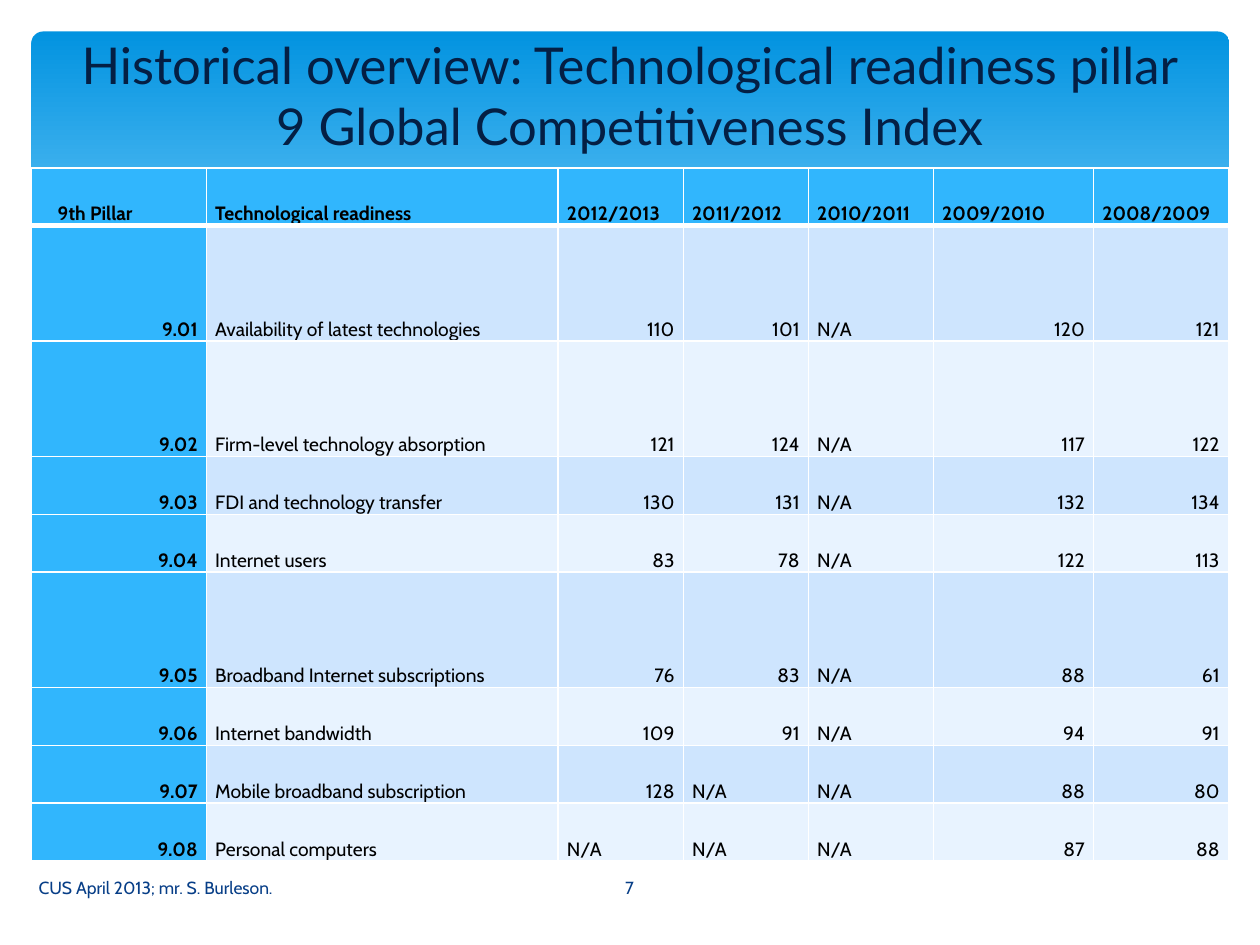
from dataclasses import dataclass

from lxml import etree
from pptx import Presentation
from pptx.dml import color
from pptx.enum import shapes, text
from pptx.oxml import ns
from pptx.slide import Slide
from pptx.util import Pt

YEARS = ["2012/2013", "2011/2012", "2010/2011", "2009/2010", "2008/2009"]
INDICATORS = [
    ("9.01", "Availability of latest technologies", "110", "101", "N/A", "120", "121"),
    ("9.02", "Firm-level technology absorption", "121", "124", "N/A", "117", "122"),
    ("9.03", "FDI and technology transfer", "130", "131", "N/A", "132", "134"),
    ("9.04", "Internet users", "83", "78", "N/A", "122", "113"),
    ("9.05", "Broadband Internet subscriptions", "76", "83", "N/A", "88", "61"),
    ("9.06", "Internet bandwidth", "109", "91", "N/A", "94", "91"),
    ("9.07", "Mobile broadband subscription", "128", "N/A", "N/A", "88", "80"),
    ("9.08", "Personal computers", "N/A", "N/A", "N/A", "87", "88"),
]
COLUMN_WIDTHS = [100, 201, 71.5, 71.5, 71.5, 91.5, 77]
ROW_HEIGHT = 33
TALL_ROWS = {1, 2, 5}
WAVE = [(703, 177), (670, 189), (630, 197), (582, 199), (524, 196), (466, 189),
        (400, 177), (322, 158), (245, 142), (180, 134), (127, 132), (86, 134),
        (55, 140), (33, 148), (17, 153), (17, 237), (703, 237)]


def rgb(value):
    return color.RGBColor.from_string(value)


def apply(target, values):
    for name, value in values.items():
        setattr(target, name, value)


@dataclass
class SlideBuilder:
    slide: Slide
    body_font: str = "Cabin"
    title_font: str = "Lato"
    title_color: str = "041F44"
    footer_color: str = "073E87"
    accent: str = "31B6FD"
    bands: tuple = ("E8F3FF", "CEE5FE")
    border: str = "FFFFFF"

    def add_text(self, paragraph, wording, hex_color, font, layout):
        """Put one run in the paragraph, with font and paragraph formats."""
        run = paragraph.add_run()
        run.text = wording
        apply(run.font, font)
        run.font.color.rgb = rgb(hex_color)
        apply(paragraph, layout)

    def banner(self, left, top, width, height):
        shape = self.slide.shapes.add_shape(
            shapes.MSO_SHAPE.ROUNDED_RECTANGLE, Pt(left), Pt(top), Pt(width), Pt(height))
        shape.adjustments[0] = 0.034
        shape.shadow.inherit = False
        shape.line.fill.background()
        shape.fill.gradient()
        shape.fill.gradient_angle = 270
        stops = [(0, "0293E0"), (0.9, "83D3FE")]
        for stop, (position, value) in zip(shape.fill.gradient_stops, stops):
            stop.position = position
            stop.color.rgb = rgb(value)

    def wave(self, points):
        start, *rest = [(Pt(x), Pt(y)) for x, y in points]
        builder = self.slide.shapes.build_freeform(*start)
        builder.add_line_segments(rest, close=True)
        shape = builder.convert_to_shape()
        shape.shadow.inherit = False
        shape.fill.solid()
        shape.fill.fore_color.rgb = rgb("FFFFFF")
        shape.line.fill.background()

    def label(self, wording, left, top, width, height, hex_color, font, align):
        box = self.slide.shapes.add_textbox(Pt(left), Pt(top), Pt(width), Pt(height))
        frame = box.text_frame
        apply(frame, {"word_wrap": True, "vertical_anchor": text.MSO_ANCHOR.MIDDLE})
        self.add_text(frame.paragraphs[0], wording, hex_color, font, {"alignment": align})

    def title(self, wording):
        self.label(wording, 36, 0, 648, 108, self.title_color,
                   {"name": self.title_font, "size": Pt(29)}, text.PP_ALIGN.CENTER)

    def footer(self, wording, left, width, align):
        self.label(wording, left, 492.5, width, 29, self.footer_color,
                   {"name": self.body_font, "size": Pt(10)}, align)

    def cell_borders(self, cell, widths):
        """Draw the borders ahead of the fill, as the schema orders them."""
        properties = cell._tc.get_or_add_tcPr()
        for index, (side, width) in enumerate(widths.items()):
            line = etree.Element(ns.qn(f"a:ln{side}"), w=str(Pt(width)))
            fill = etree.SubElement(line, ns.qn("a:solidFill"))
            etree.SubElement(fill, ns.qn("a:srgbClr"), val=self.border)
            properties.insert(index, line)

    def table_cell(self, cell, wording, row, column):
        is_header, is_key = row == 0, column == 0
        is_right = not is_header and column != 1 and wording != "N/A"
        apply(cell, {
            "margin_left": Pt(15 if is_header and is_key else 5),
            "margin_right": Pt(5), "margin_top": 0, "margin_bottom": 0,
            "vertical_anchor": text.MSO_ANCHOR.BOTTOM})
        cell.fill.solid()
        cell.fill.fore_color.rgb = rgb(self.accent if is_header or is_key
                                       else self.bands[row % 2])
        self.cell_borders(cell, {"L": 1, "R": 1, "T": 3 if row == 1 else 1,
                                 "B": 3 if is_header else 1})
        align = text.PP_ALIGN.RIGHT if is_right else text.PP_ALIGN.LEFT
        self.add_text(cell.text_frame.paragraphs[0], wording, "000000",
                      {"name": self.body_font, "size": Pt(11), "bold": is_header or is_key},
                      {"alignment": align, "line_spacing": 1.15})

    def table(self, rows, left, top):
        heights = [ROW_HEIGHT * (2 if index in TALL_ROWS else 1)
                   for index in range(len(rows))]
        table = self.slide.shapes.add_table(
            len(rows), len(COLUMN_WIDTHS), Pt(left), Pt(top),
            Pt(sum(COLUMN_WIDTHS)), Pt(sum(heights))).table
        for column, width in zip(table.columns, COLUMN_WIDTHS):
            column.width = Pt(width)
        for row_index, (values, height) in enumerate(zip(rows, heights)):
            table.rows[row_index].height = Pt(height)
            for column_index, wording in enumerate(values):
                self.table_cell(table.cell(row_index, column_index), wording,
                                row_index, column_index)


def main():
    presentation = Presentation()
    apply(presentation, {"slide_width": Pt(720), "slide_height": Pt(540)})
    builder = SlideBuilder(presentation.slides.add_slide(presentation.slide_layouts[6]))
    builder.banner(18, 18, 684.5, 194.5)
    builder.wave(WAVE)
    builder.footer("CUS April 2013; mr. S. Burleson.", 15, 298, text.PP_ALIGN.LEFT)
    builder.footer("7", 314, 91.5, text.PP_ALIGN.CENTER)
    builder.title("Historical overview: Technological readiness pillar "
                  "9 Global Competitiveness Index")
    header = ("9th Pillar", "Technological readiness", *YEARS)
    builder.table([header, *INDICATORS], 18, 96)
    presentation.save("out.pptx")


if __name__ == "__main__":
    main()
